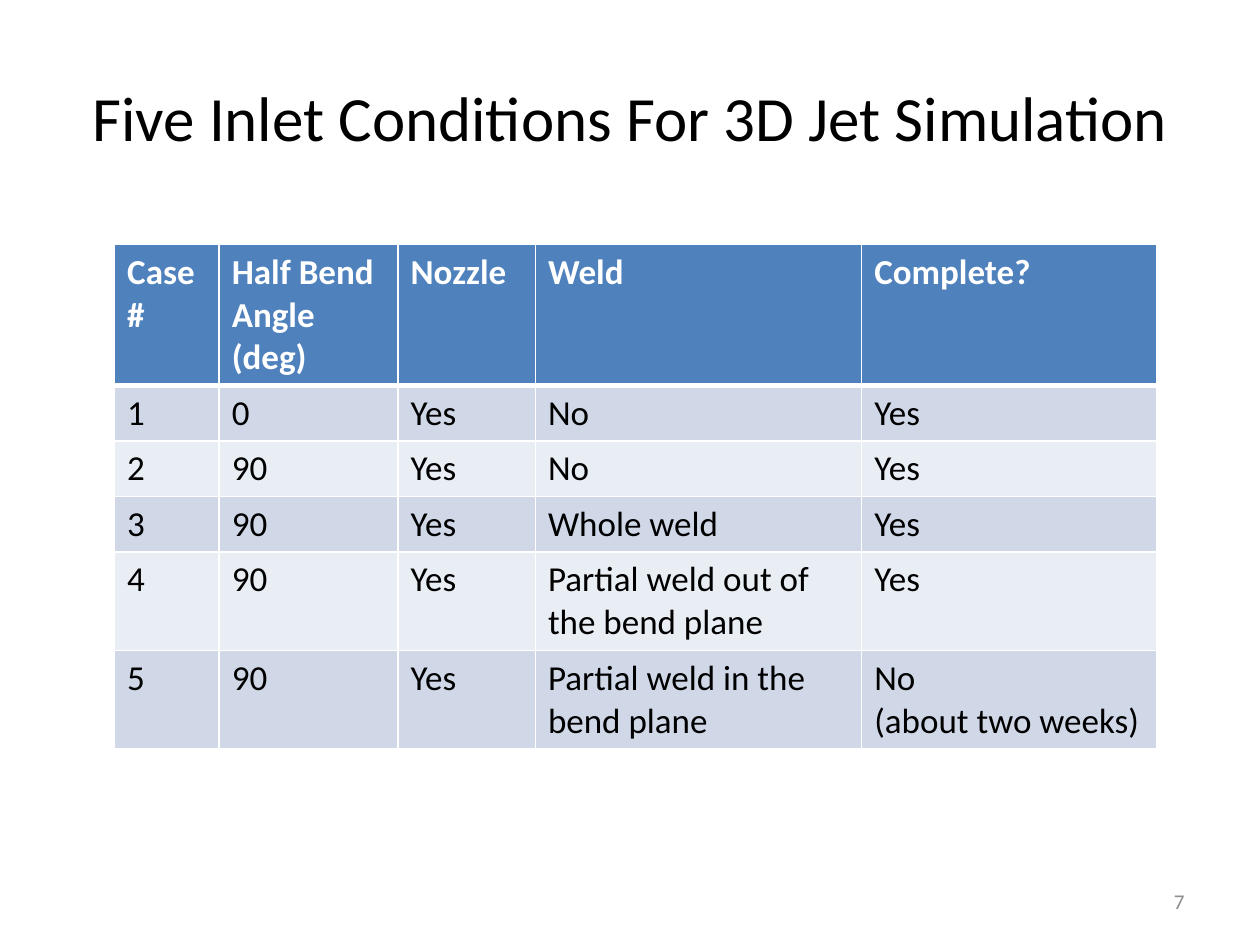
from lxml import etree
from pptx import Presentation
from pptx.dml.color import RGBColor
from pptx.enum.text import MSO_ANCHOR, PP_ALIGN
from pptx.oxml.ns import qn
from pptx.util import Inches, Pt

MIDDLE = MSO_ANCHOR.MIDDLE
LEFT, CENTER, RIGHT = PP_ALIGN.LEFT, PP_ALIGN.CENTER, PP_ALIGN.RIGHT
FONT = "Calibri"
WHITE, BLACK, GREY = "FFFFFF", "000000", "8C8C8C"
HEADER, BANDS = "4F81BD", ("D0D8E8", "E9EDF4")

COL_WIDTHS = (0.83, 1.42, 1.09, 2.59, 2.34)
ROW_HEIGHT = 0.41
CASES = (
    ("Case #", "Half Bend Angle (deg)", "Nozzle", "Weld", "Complete?"),
    ("1", "0", "Yes", "No", "Yes"),
    ("2", "90", "Yes", "No", "Yes"),
    ("3", "90", "Yes", "Whole weld", "Yes"),
    ("4", "90", "Yes", "Partial weld out of the bend plane", "Yes"),
    ("5", "90", "Yes", "Partial weld in the bend plane", "No\n(about two weeks)"),
)


def rgb(value):
    """Return the colour for a hex string."""
    return RGBColor.from_string(value)


def write(tf, text, size=20, color=BLACK, bold=False, align=LEFT):
    """Fill a text frame, one paragraph per line of text."""
    tf.text = text
    for p in tf.paragraphs:
        p.alignment = align
        for r in p.runs:
            r.font.name, r.font.size, r.font.bold = FONT, Pt(size), bold
            r.font.color.rgb = rgb(color)


def place(sp, box):
    """Move a shape to a box of left, top, width and height in inches."""
    sp.left, sp.top, sp.width, sp.height = map(Inches, box)


def border(cell, side, width, color=WHITE):
    """Draw one side of a cell as a solid line."""
    tag = etree.SubElement(cell._tc.get_or_add_tcPr(), qn(f"a:ln{side}"), w=str(Pt(width)))
    fill = etree.SubElement(tag, qn("a:solidFill"))
    etree.SubElement(fill, qn("a:srgbClr"), val=color)


def add_title(s, box, text):
    """Place the slide title in its placeholder."""
    sp = s.shapes.title
    place(sp, box)
    sp.text_frame.vertical_anchor = MIDDLE
    write(sp.text_frame, text, size=36, align=CENTER)


def add_page_number(s, box, number):
    """Place the page number at the right of its box."""
    tf = s.shapes.add_textbox(*map(Inches, box)).text_frame
    tf.word_wrap = True
    tf.vertical_anchor = MIDDLE
    write(tf, number, size=12, color=GREY, align=RIGHT)


def add_case_table(s, left, top, rows):
    """Build the table of cases with a header row and banded body rows."""
    box = (left, top, sum(COL_WIDTHS), ROW_HEIGHT * len(rows))
    table = s.shapes.add_table(len(rows), len(COL_WIDTHS), *map(Inches, box)).table
    for column, width in zip(table.columns, COL_WIDTHS):
        column.width = Inches(width)
    for i, row in enumerate(rows):
        head = i == 0
        for j, text in enumerate(row):
            cell = table.cell(i, j)
            for side in "LRTB":
                heavy = (head and side == "B") or (i == 1 and side == "T")
                border(cell, side, 3 if heavy else 1)
            cell.fill.solid()
            cell.fill.fore_color.rgb = rgb(HEADER if head else BANDS[(i - 1) % 2])
            write(cell.text_frame, text, color=WHITE if head else BLACK, bold=head)


def main():
    """Build the slide and save it."""
    prs = Presentation()
    prs.slide_width, prs.slide_height = Inches(10), Inches(7.5)
    s = prs.slides.add_slide(prs.slide_layouts[5])
    add_title(s, (0.5, 0.3, 9, 1.25), "Five Inlet Conditions For 3D Jet Simulation")
    add_case_table(s, 0.91, 1.94, CASES)
    add_page_number(s, (7.17, 6.95, 2.33, 0.4), "7")
    prs.save("out.pptx")


if __name__ == "__main__":
    main()
